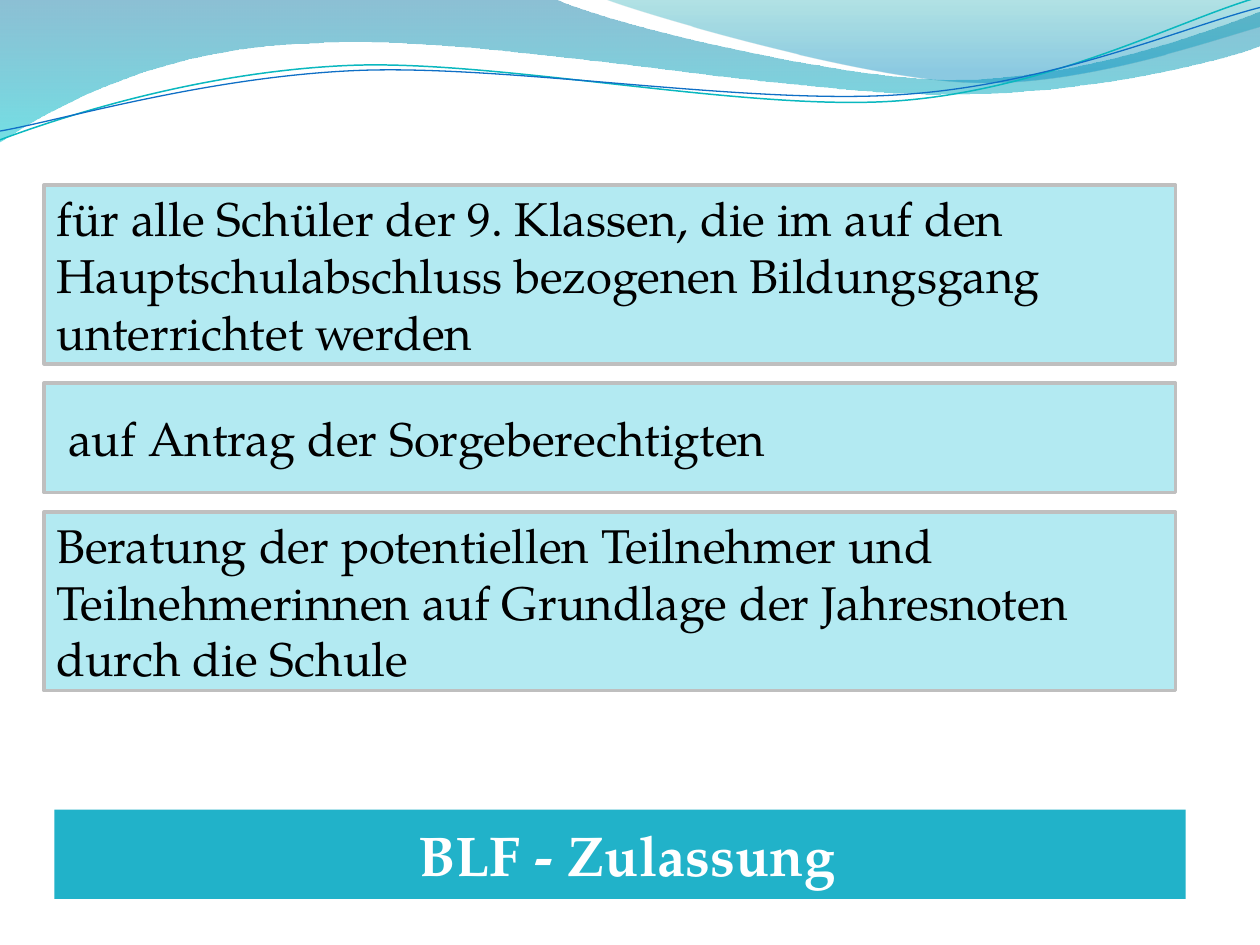
import math
from lxml import etree
from pptx import Presentation, util as u
from pptx.dml.color import RGBColor
from pptx.enum import shapes, text
from pptx.oxml.ns import qn

Pt = u.Pt
FONT = "TeX Gyre Pagella"


def rgb(code):
    return RGBColor.from_string(code)


def write(shape, words, size=27, color="000000", bold=False,
          align=text.PP_ALIGN.LEFT, before=0):
    frame = shape.text_frame
    frame.word_wrap = True
    frame.vertical_anchor = text.MSO_ANCHOR.MIDDLE
    para = frame.paragraphs[0]
    para.alignment = align
    para.space_before = Pt(before)
    run = para.add_run()
    run.text = words
    run.font.name, run.font.size, run.font.bold = FONT, Pt(size), bold
    run.font.color.rgb = rgb(color)


def trace(home, start, parts, closed):
    """Draw a path of lines (one point) and Bezier curves (three points)."""
    pts = [(Pt(x), Pt(y)) for x, y in [start, *sum(parts, [])]]
    pen = home.build_freeform(*pts[0])
    pen.add_line_segments(pts[1:], close=closed)
    shape = pen.convert_to_shape()
    shape.shadow.inherit = False
    # Merge each run of three line ends into one cubic curve
    ends = iter(list(shape._element.iter(qn("a:lnTo"))))
    for part in parts:
        segs = [next(ends) for _ in part]
        if len(segs) == 3:
            cubic = etree.Element(qn("a:cubicBezTo"))
            segs[0].addprevious(cubic)
            for seg in segs:
                cubic.append(seg[0])
                seg.getparent().remove(seg)
    return shape


prs = Presentation()
prs.slide_width, prs.slide_height = Pt(720), Pt(540)
slide = prs.slides.add_slide(prs.slide_layouts[6])

# Header waves: start, parts, gradient stops (position, colour, opacity %)
waves = [
    ((0, 0), [
        [(316.8, -0.7)],
        [(342.7, 12.2), (478.1, 45.4), (545.8, 45.4)],
        [(614.2, 45.4), (689.8, 18.7), (720, 6.5)],
        [(720.7, 25.9)],
        [(707.8, 31.7), (626.4, 54.7), (537.1, 54)],
        [(447.8, 54), (275, 20.2), (185, 24.5)],
        [(92.9, 25.9), (33.1, 59.8), (-0.7, 81.4)],
        [(0, 0)],
    ], [(0, "0074A1", 45), (1, "00C6CF", 55)]),
    ((344.9, -0.7), [
        [(366.5, 7.9), (491, 44.6), (553.7, 46.8)],
        [(616.3, 49.7), (691.9, 23), (720, 15.1)],
        [(720, 0)],
        [(344.9, -0.7)],
    ], [(0, "00A1A9", 30), (0.8, "008BBF", 45)]),
]
for start, parts, stops in waves:
    wave = trace(slide.shapes, start, parts, True)
    wave.line.fill.background()
    wave.fill.gradient()
    wave.fill.gradient_angle = 270
    for stop, (pos, color, alpha) in zip(wave.fill.gradient_stops, stops):
        stop.position = pos
        stop.color.rgb = rgb(color)
    tags = wave.fill._xPr.iter(qn("a:srgbClr"))
    for tag, (pos, color, alpha) in zip(list(tags), stops):
        etree.SubElement(tag, qn("a:alpha")).set("val", str(alpha * 1000))

# Thin curves below the waves, laid out level and then tilted together
TILT = 2.7
cos, sin = math.cos(math.radians(TILT)), math.sin(math.radians(TILT))
midx, midy = 359.5, 42
curves = [
    ((0, 79.9), [
        [(34.6, 67), (113.8, 41), (199.4, 37.4)],
        [(284.4, 33.8), (427, 64.1), (513.4, 57.6)],
        [(599.8, 51.1), (675.4, 10.8), (718.6, -1.4)],
    ], "0AB8BF", 0.85),
    ((0, 74.9), [
        [(33.8, 69.1), (118.1, 43.9), (203.8, 40.3)],
        [(290.2, 36.7), (429.8, 60.5), (516.2, 54)],
        [(601.9, 48.2), (677.5, 15.1), (720, 4.3)],
    ], "0F6FC6", 0.75),
]
group = slide.shapes.add_group_shape()
for start, parts, color, width in curves:
    first, *rest = [
        [(midx + (x - midx) * cos - (y - midy) * sin,
          midy + (x - midx) * sin + (y - midy) * cos) for x, y in part]
        for part in [[start], *parts]]
    curve = trace(group.shapes, first[0], rest, False)
    curve.rotation = -TILT
    curve.fill.background()
    curve.line.color.rgb = rgb(color)
    curve.line.width = Pt(width)

# Title bar
bar = slide.shapes.add_shape(shapes.MSO_SHAPE.RECTANGLE,
                             Pt(31), Pt(462.7), Pt(646.5), Pt(51))
bar.shadow.inherit = False
bar.fill.solid()
bar.fill.fore_color.rgb = rgb("21B2C9")
bar.line.fill.background()
write(bar, " BLF - Zulassung", size=32, color="FFFFFF", bold=True,
      align=text.PP_ALIGN.CENTER, before=6.4)

# Stacked statement boxes
boxes = [
    (102.2, "für alle Schüler der 9. Klassen, die im auf den Hauptschulabschluss "
            "bezogenen Bildungsgang unterrichtet werden"),
    (62.6, " auf Antrag der Sorgeberechtigten"),
    (102.2, "Beratung der potentiellen Teilnehmer und Teilnehmerinnen auf "
            "Grundlage der Jahresnoten durch die Schule"),
]
top, gap = 105.7, 11
for high, words in boxes:
    box = slide.shapes.add_shape(shapes.MSO_SHAPE.RECTANGLE,
                                 Pt(25.2), Pt(top), Pt(646.5), Pt(high))
    box.shadow.inherit = False
    box.fill.solid()
    box.fill.fore_color.rgb = rgb("B3EAF2")
    box.line.color.rgb = rgb("BFBFBF")
    box.line.width = Pt(2)
    write(box, words)
    top += high + gap

prs.save("out.pptx")
